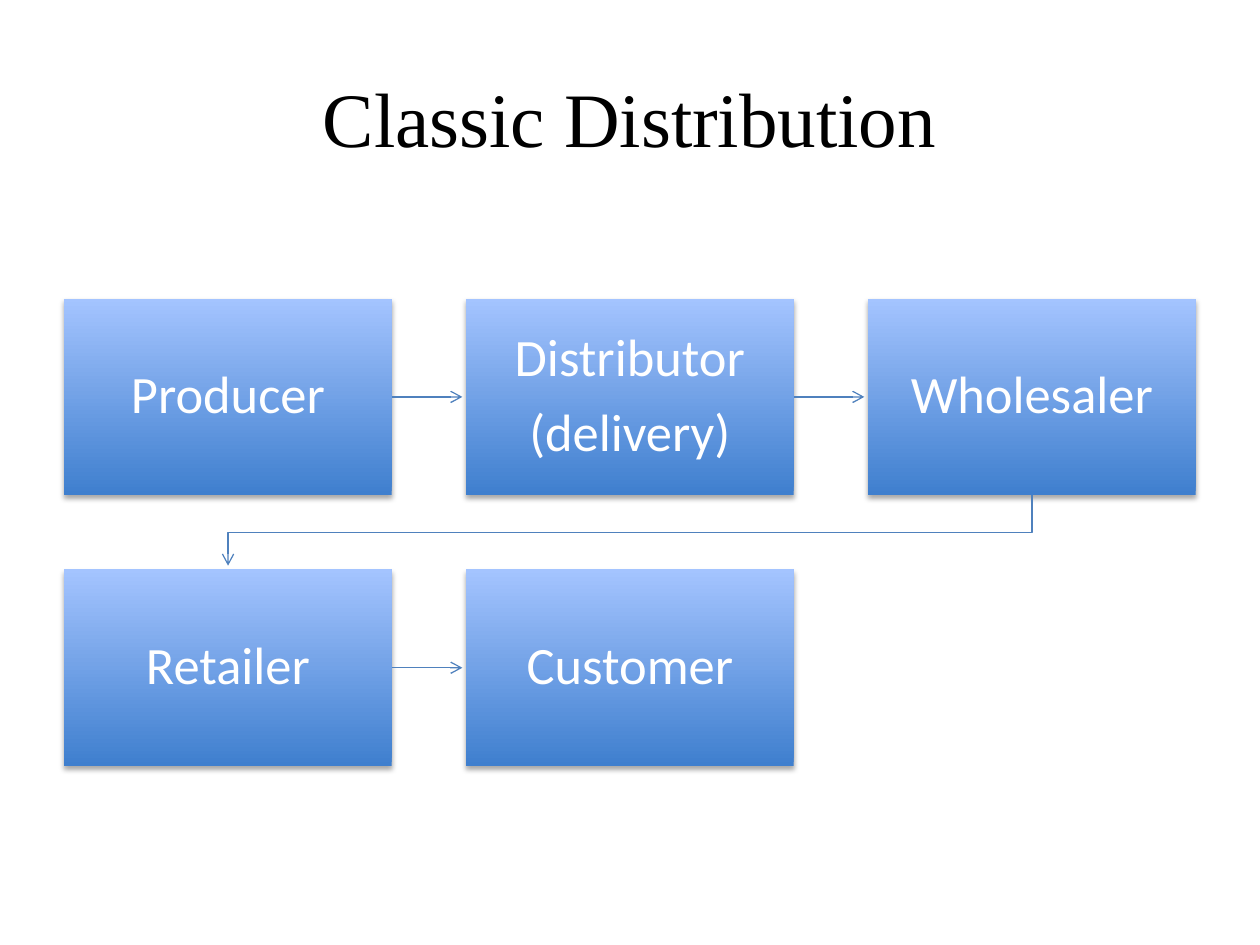
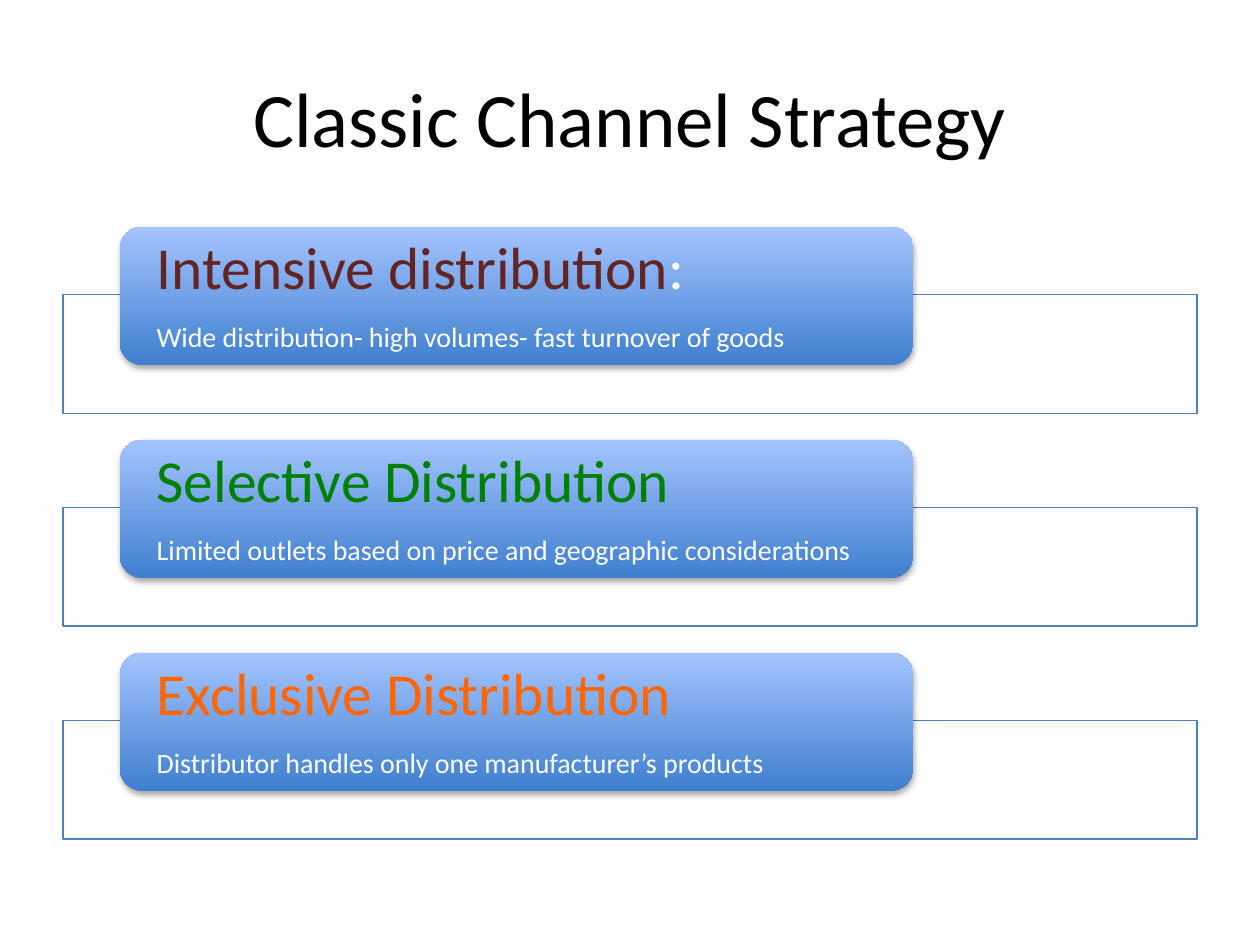
from lxml import etree
from pptx import Presentation
from pptx.dml.color import RGBColor
from pptx.enum.shapes import MSO_CONNECTOR, MSO_SHAPE
from pptx.enum.text import MSO_ANCHOR, PP_ALIGN
from pptx.oxml import parse_xml
from pptx.oxml.ns import nsdecls, qn
from pptx.util import Inches, Pt

RECTANGLE, ROUNDED = MSO_SHAPE.RECTANGLE, MSO_SHAPE.ROUNDED_RECTANGLE
STRAIGHT = MSO_CONNECTOR.STRAIGHT
CENTER, LEFT = PP_ALIGN.CENTER, PP_ALIGN.LEFT
MIDDLE = MSO_ANCHOR.MIDDLE
RIGHT_SIDE = 3

COLORS = {name: RGBColor.from_string(value) for name, value in {
    "black": "000000", "white": "FFFFFF", "line": "4F81BD",
    "deep": "3F7FCE", "light": "A4C4FF",
    "maroon": "632523", "green": "008000", "orange": "FF6600",
}.items()}
BODY_FONT = "Calibri"
SHADOW = (
    f'<a:effectLst {nsdecls("a")}><a:outerShdw blurRad="40000" dist="23000" '
    'dir="5400000" rotWithShape="0"><a:srgbClr val="000000">'
    '<a:alpha val="35000"/></a:srgbClr></a:outerShdw></a:effectLst>')

WIDTH, HEIGHT = 10, 7.5


def add_card(page, kind, left, top, width, height, text, size, align, insets):
    """Add a gradient card with a soft shadow and white text."""
    card = page.shapes.add_shape(
        kind, Inches(left), Inches(top), Inches(width), Inches(height))
    card.fill.gradient()
    card.fill.gradient_angle = 90
    for stop, name in zip(card.fill.gradient_stops, ("deep", "light")):
        stop.color.rgb = COLORS[name]
    card.line.fill.background()
    card._element.spPr.append(parse_xml(SHADOW))

    frame = card.text_frame
    frame.word_wrap = True
    frame.vertical_anchor = MIDDLE
    frame.margin_left = frame.margin_right = Inches(insets[0])
    frame.margin_top = frame.margin_bottom = Inches(insets[1])
    frame.text = text
    for para in frame.paragraphs:
        para.alignment = align
        para.line_spacing = 0.9
        space_after = etree.SubElement(para._p.get_or_add_pPr(), qn("a:spcAft"))
        etree.SubElement(space_after, qn("a:spcPct"), val="35000")
        font = para.runs[0].font
        font.name, font.size = BODY_FONT, Pt(size)
        font.color.rgb = COLORS["white"]
    return card


def style_arrow(arrow):
    """Give a connector or outline a thin line with an open arrowhead."""
    arrow.line.color.rgb = COLORS["line"]
    arrow.line.width = Pt(0.75)
    etree.SubElement(arrow.line._get_or_add_ln(), qn("a:tailEnd"), type="arrow")
    etree.SubElement(arrow._element.spPr, qn("a:effectLst"))


deck = Presentation()
deck.slide_width, deck.slide_height = Inches(WIDTH), Inches(HEIGHT)

# Slides and their titles
pages = []
for title, font_name in (("Classic Distribution", "Times New Roman"),
                         ("Classic Channel Strategy", BODY_FONT)):
    page = deck.slides.add_slide(deck.slide_layouts[5])
    box = page.shapes.title
    box.left, box.top = Inches(0.05 * WIDTH), Inches(0.04 * HEIGHT)
    box.width, box.height = Inches(0.9 * WIDTH), Inches(1.25)
    box.text_frame.text = title
    box.text_frame.vertical_anchor = MIDDLE
    para = box.text_frame.paragraphs[0]
    para.alignment = CENTER
    span = para.runs[0]
    span.font.name, span.font.size = font_name, Pt(44)
    span.font.color.rgb = COLORS["black"]
    pages.append(page)
chain_page, strategy_page = pages

# Distribution chain: steps in a grid of three columns
STEPS = ["Producer", "Distributor\n(delivery)", "Wholesaler", "Retailer", "Customer"]
COLUMNS = 3
STEP_WIDTH, STEP_HEIGHT = 2.6, 1.56
GRID_LEFT, GRID_TOP = 0.51, 2.37
COLUMN_PITCH = (WIDTH - 2 * GRID_LEFT - STEP_WIDTH) / (COLUMNS - 1)
ROW_PITCH = 2.15
ARROW_LENGTH = 0.56

steps = []
for index, text in enumerate(STEPS):
    row, column = divmod(index, COLUMNS)
    steps.append(add_card(
        chain_page, RECTANGLE, GRID_LEFT + column * COLUMN_PITCH,
        GRID_TOP + row * ROW_PITCH, STEP_WIDTH, STEP_HEIGHT,
        text, 30, CENTER, (0.23, 0.23)))

# Arrows within a row stop just short of the next step
for index, step in enumerate(steps[:-1]):
    if index % COLUMNS == COLUMNS - 1:
        continue
    start, middle = step.left + step.width, step.top + step.height // 2
    arrow = chain_page.shapes.add_connector(
        STRAIGHT, start, middle, start + Inches(ARROW_LENGTH), middle)
    arrow.begin_connect(step, RIGHT_SIDE)
    style_arrow(arrow)

# Bent arrow from the end of the first row to the start of the second
wholesaler, retailer = steps[COLUMNS - 1], steps[COLUMNS]
start_x = wholesaler.left + wholesaler.width // 2
end_x = retailer.left + retailer.width // 2
row_bottom = wholesaler.top + wholesaler.height
bend_y = (row_bottom + retailer.top) // 2
outline = chain_page.shapes.build_freeform(start_x, row_bottom)
outline.add_line_segments(
    [(start_x, bend_y), (end_x, bend_y),
     (end_x, row_bottom + Inches(ARROW_LENGTH))], close=False)
bent_arrow = outline.convert_to_shape()
bent_arrow.fill.background()
style_arrow(bent_arrow)

# Channel strategies: a card overlapping an outlined panel
STRATEGIES = [
    ("Intensive distribution", ":", "maroon",
     "Wide distribution- high volumes- fast turnover of goods"),
    ("Selective Distribution", "", "green",
     "Limited outlets based on price and geographic considerations"),
    ("Exclusive Distribution", "", "orange",
     "Distributor handles only one manufacturer’s products"),
]
PANEL_WIDTH, PANEL_HEIGHT = 0.9 * WIDTH, 0.94
CARD_WIDTH, CARD_HEIGHT = 0.7 * PANEL_WIDTH, 1.1
STRATEGY_TOP, STRATEGY_PITCH, PANEL_DROP = 1.8, 1.69, 0.54

for index, (heading, mark, color, note) in enumerate(STRATEGIES):
    top = STRATEGY_TOP + index * STRATEGY_PITCH
    panel = strategy_page.shapes.add_shape(
        RECTANGLE, Inches(0.05 * WIDTH), Inches(top + PANEL_DROP),
        Inches(PANEL_WIDTH), Inches(PANEL_HEIGHT))
    panel.shadow.inherit = False
    panel.fill.solid()
    panel.fill.fore_color.rgb = COLORS["white"]
    panel.line.color.rgb = COLORS["line"]
    panel.line.width = Pt(0.75)

    card = add_card(
        strategy_page, ROUNDED, 0.095 * WIDTH, top, CARD_WIDTH, CARD_HEIGHT,
        f"{heading}\n{note}", 16, LEFT, (0.24, 0))
    para = card.text_frame.paragraphs[0]
    if mark:
        para.add_run().text = mark
    for span, name in zip(para.runs, (color, "white")):
        span.font.name, span.font.size = BODY_FONT, Pt(34)
        span.font.color.rgb = COLORS[name]

deck.save("out.pptx")
